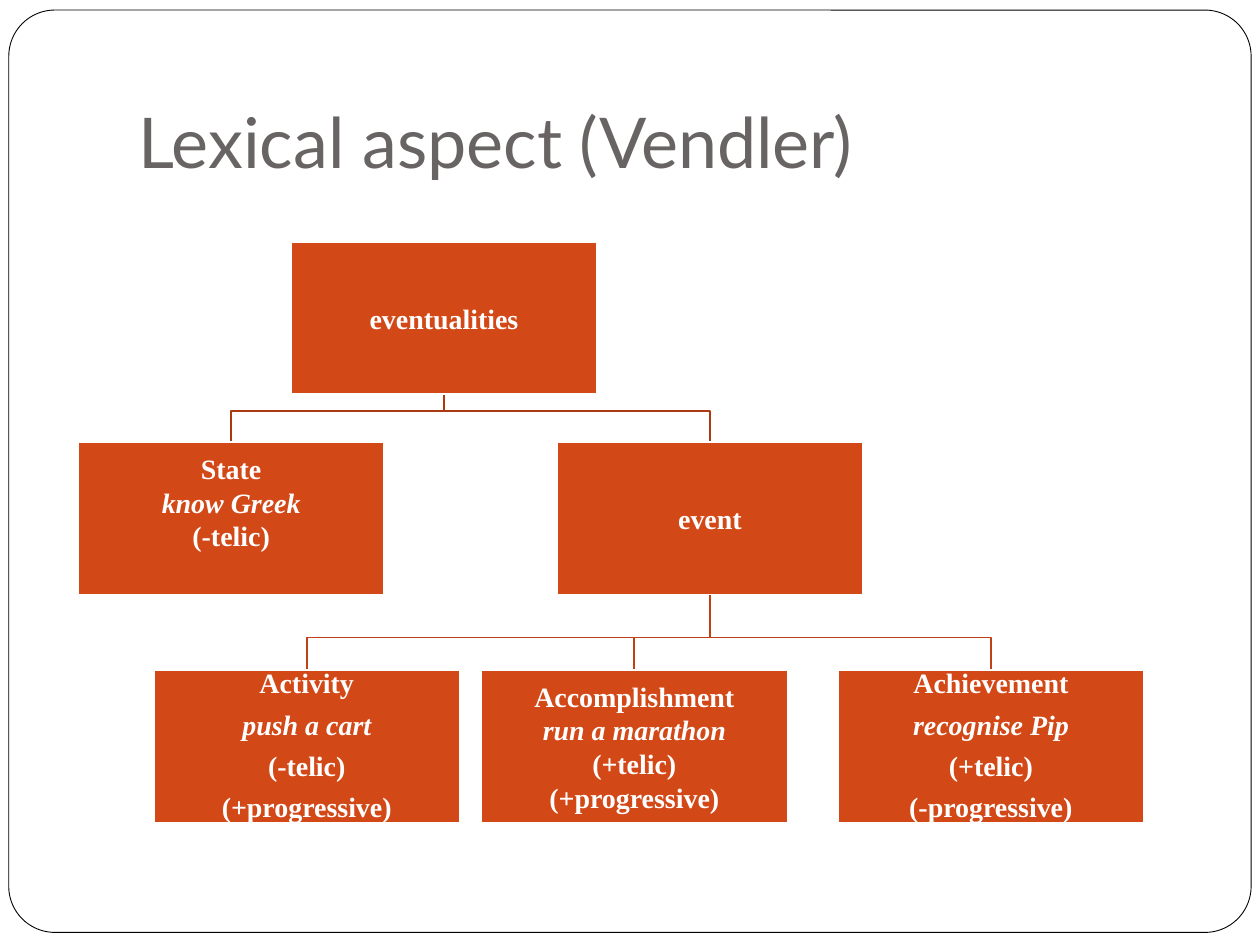
from pptx import Presentation
from pptx import util as u
from pptx.dml.color import RGBColor
from pptx.enum import shapes, text

WHITE = RGBColor(0xFF, 0xFF, 0xFF)
BLACK = RGBColor(0, 0, 0)
GREY = RGBColor(0x69, 0x64, 0x64)
ORANGE = RGBColor(0xD3, 0x48, 0x17)
RUST = RGBColor(0xA9, 0x3A, 0x12)
BRICK = RGBColor(0xBF, 0x41, 0x15)

WIDE, HIGH = 2.43, 1.21          # size of a tree box
ROWS = (1.92, 3.51, 5.32)        # top of each tree level
PAD = 0.01

# name: (row, left, lines, space after in points, bottom inset)
NODES = {
    "root": (0, 2.31, ["eventualities"], 0, PAD),
    "state": (1, 0.62, ["State", "know Greek", "(-telic)"], 0, 0.27),
    "event": (1, 4.42, ["event"], 0, PAD),
    "finish": (2, 3.82, ["Accomplishment", "run a marathon",
                         "(+telic)", "(+progressive)"], 0, PAD),
    "point": (2, 6.65, ["Achievement", "recognise Pip",
                        "(+telic)", "(-progressive)"], 6.3, PAD),
    "active": (2, 1.22, ["Activity", "push a cart",
                         "(-telic)", "(+progressive)"], 6.3, PAD),
}

# parent, children, drop to the shared bar, colour
LINKS = [
    ("event", ("active", "point", "finish"), 0.34, BRICK),
    ("root", ("event", "state"), 0.13, RUST),
]


def style(item, **values):
    for name, value in values.items():
        setattr(item, name, value)


def paint(shape, fill, line, width):
    """Give a shape flat fill and outline; no fill when fill is None."""
    shape.shadow.inherit = False
    if fill is None:
        shape.fill.background()
    else:
        shape.fill.solid()
        shape.fill.fore_color.rgb = fill
    shape.line.color.rgb = line
    shape.line.width = u.Pt(width)


def add_frame(slide):
    frame = slide.shapes.add_shape(
        shapes.MSO_SHAPE.ROUNDED_RECTANGLE,
        u.Inches(0.07), u.Inches(0.08), u.Inches(9.86), u.Inches(7.32))
    frame.adjustments[0] = 0.05
    paint(frame, WHITE, BLACK, 0.5)
    slide.shapes._spTree.insert(2, frame._element)  # behind the title


def add_title(slide, words):
    title = slide.shapes.title
    style(title, left=u.Inches(1), top=u.Inches(0.3),
          width=u.Inches(8.5), height=u.Inches(1.25))
    frame = title.text_frame
    frame.text = words
    style(frame, vertical_anchor=text.MSO_ANCHOR.BOTTOM, word_wrap=True,
          margin_left=u.Inches(0.1), margin_right=u.Inches(0.1),
          margin_top=u.Inches(0.05), margin_bottom=u.Inches(0.1))
    para = frame.paragraphs[0]
    para.alignment = text.PP_ALIGN.LEFT
    font = para.runs[0].font
    style(font, name="Lato", size=u.Pt(40), bold=False)
    font.color.rgb = GREY


def add_link(slide, parent, child, drop, color):
    """Draw an elbow from the foot of a parent to the top of a child."""
    row, left = NODES[parent][:2]
    low, side = NODES[child][:2]
    start, end = left + WIDE / 2, side + WIDE / 2
    foot = ROWS[row] + HIGH
    path = slide.shapes.build_freeform(
        u.Inches(start), u.Inches(foot), scale=1.0)
    spots = [(start, foot + drop), (end, foot + drop), (end, ROWS[low])]
    path.add_line_segments(
        [(u.Inches(x), u.Inches(y)) for x, y in spots], close=False)
    paint(path.convert_to_shape(), None, color, 1)


def add_node(slide, row, left, lines, gap, base):
    box = slide.shapes.add_shape(
        shapes.MSO_SHAPE.RECTANGLE, u.Inches(left), u.Inches(ROWS[row]),
        u.Inches(WIDE), u.Inches(HIGH))
    paint(box, ORANGE, WHITE, 1)
    frame = box.text_frame
    style(frame, word_wrap=True, vertical_anchor=text.MSO_ANCHOR.MIDDLE,
          margin_left=u.Inches(PAD), margin_right=u.Inches(PAD),
          margin_top=u.Inches(PAD), margin_bottom=u.Inches(base))
    for i, words in enumerate(lines):
        para = frame.paragraphs[0] if i == 0 else frame.add_paragraph()
        style(para, alignment=text.PP_ALIGN.CENTER, space_after=u.Pt(gap),
              line_spacing=0.9 if gap else 1.0)
        run = para.add_run()
        run.text = words
        # The second line holds the example phrase
        style(run.font, name="Times New Roman", size=u.Pt(16),
              bold=True, italic=i == 1)
        run.font.color.rgb = WHITE


def main():
    deck = Presentation()
    style(deck, slide_width=u.Inches(10), slide_height=u.Inches(7.5))
    slide = deck.slides.add_slide(deck.slide_layouts[5])

    # Border and title
    add_frame(slide)
    add_title(slide, "Lexical aspect (Vendler)")

    # Tree: lines first, then the boxes
    for parent, kids, drop, color in LINKS:
        for child in kids:
            add_link(slide, parent, child, drop, color)
    for node in NODES.values():
        add_node(slide, *node)

    deck.save("out.pptx")


if __name__ == "__main__":
    main()
